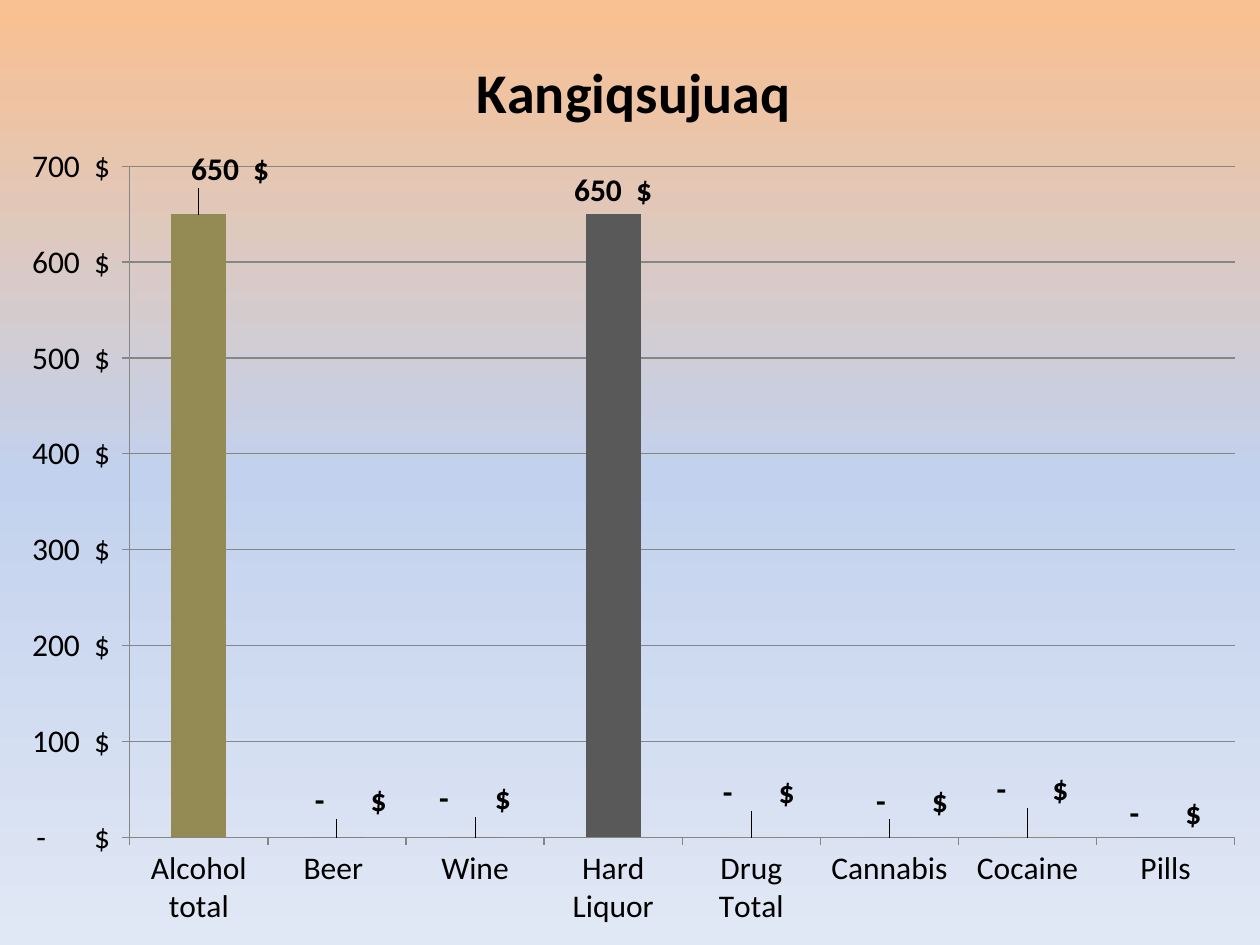
import pptx
import pptx.chart.data
import pptx.dml.color
import pptx.enum.chart
import pptx.oxml
import pptx.oxml.ns
import pptx.util
from lxml import etree

RGBColor = pptx.dml.color.RGBColor
Inches, Pt = pptx.util.Inches, pptx.util.Pt
qn = pptx.oxml.ns.qn

# Content: category, value, bar colour, label shift (share of chart width, height)
TITLE = "Kangiqsujuaq"
BARS = [
    ("Alcohol total", 650, RGBColor(0x94, 0x8A, 0x54), (0.025, -0.022)),
    ("Beer ", 0, RGBColor(0x60, 0x4A, 0x7B), (0.011, -0.014)),
    ("Wine", 0, RGBColor(0x95, 0x37, 0x35), (0, -0.016)),
    ("Hard Liquor", 650, RGBColor(0x59, 0x59, 0x59), None),
    ("Drug Total", 0, RGBColor(0x9B, 0xBB, 0x59), (0.006, -0.022)),
    ("Cannabis", 0, RGBColor(0x80, 0x64, 0xA2), (0.018, -0.013)),
    ("Cocaine", 0, RGBColor(0xF7, 0x96, 0x46), (0.004, -0.025)),
    ("Pills", 0, None, None),
]
BLUE = RGBColor(0x4F, 0x81, 0xBD)
BLACK = RGBColor(0, 0, 0)
GRAY = RGBColor(0x86, 0x86, 0x86)
BACKGROUND = [
    (0, RGBColor(0xFA, 0xC0, 0x90)),
    (50, RGBColor(0xC2, 0xD1, 0xED)),
    (100, RGBColor(0xE1, 0xE8, 0xF5)),
]
MONEY = ('_ * #,##0_)\\ "$"_ ;_ * \\(#,##0\\)\\ "$"_ ;'
         '_ * "-"??_)\\ "$"_ ;_ @_ ')


def set_font(font, size, bold=False):
    font.name = "Calibri"
    font.size = Pt(size)
    font.bold = bold
    font.color.rgb = BLACK


def manual_layout(**values):
    """Build a c:layout element from its parts, given in schema order."""
    layout = pptx.oxml.parse_xml(
        f"<c:layout {pptx.oxml.ns.nsdecls('c')}><c:manualLayout/></c:layout>")
    for name, value in values.items():
        etree.SubElement(layout[0], qn(f"c:{name}")).set("val", str(value))
    return layout


def replace_layout(parent, index, layout):
    for old in parent.findall(qn("c:layout")):
        parent.remove(old)
    parent.insert(index, layout)


prs = pptx.Presentation()
prs.slide_width, prs.slide_height = Inches(10), Inches(7.5)
s = prs.slides.add_slide(prs.slide_layouts[6])

# Background gradient, top to bottom
s.background.fill.gradient()
grad = s.background.fill._xPr.find(qn("a:gradFill"))
for child in list(grad):
    grad.remove(child)
stops = etree.SubElement(grad, qn("a:gsLst"))
for position, color in BACKGROUND:
    stop = etree.SubElement(stops, qn("a:gs"), pos=str(position * 1000))
    etree.SubElement(stop, qn("a:srgbClr"), val=str(color))
etree.SubElement(grad, qn("a:lin"), ang="5400000", scaled="0")

# Chart
data = pptx.chart.data.CategoryChartData()
data.categories = [bar[0] for bar in BARS]
data.add_series(TITLE, [bar[1] for bar in BARS])
chart = s.shapes.add_chart(
    pptx.enum.chart.XL_CHART_TYPE.COLUMN_CLUSTERED, 0, 0,
    prs.slide_width, prs.slide_height, data).chart
set_font(chart.font, 18)
chart.has_legend = False
plot_area = chart._chartSpace.chart.plotArea
replace_layout(plot_area, 0, manual_layout(
    layoutTarget="inner", xMode="edge", yMode="edge",
    x=0.103, y=0.176, w=0.877, h=0.71))

# Title
chart.has_title = True
r = chart.chart_title.text_frame.paragraphs[0].add_run()
r.text = TITLE
set_font(r.font, 32, True)
replace_layout(chart.chart_title._element, 1, manual_layout(
    xMode="edge", yMode="edge", x=0.37, y=0.045))

# Axes
for axis in (chart.category_axis, chart.value_axis):
    axis.format.line.color.rgb = GRAY
    axis.major_tick_mark = pptx.enum.chart.XL_TICK_MARK.OUTSIDE
    set_font(axis.tick_labels.font, 18)
axis = chart.value_axis
axis.minimum_scale, axis.maximum_scale, axis.major_unit = 0, 700, 100
axis.has_major_gridlines = True
axis.major_gridlines.format.line.color.rgb = GRAY
axis.tick_labels.number_format = MONEY
axis.tick_labels.number_format_is_linked = False

# Bars and their labels
plot = chart.plots[0]
plot.gap_width = 150
plot.vary_by_categories = False
series = plot.series[0]
series.format.fill.solid()
series.format.fill.fore_color.rgb = BLUE
series.invert_if_negative = False
outside = pptx.enum.chart.XL_LABEL_POSITION.OUTSIDE_END
labels = series.data_labels
labels.show_value = True
labels.position = outside
labels.number_format = MONEY
labels.number_format_is_linked = False
set_font(labels.font, 18, True)

for i, (name, value, color, shift) in enumerate(BARS):
    point = series.points[i]
    if color is not None:
        point.format.fill.solid()
        point.format.fill.fore_color.rgb = color
    if shift is not None:
        label = point.data_label
        label.position = outside
        set_font(label.font, 18, True)
        dlbl = label._dLbl
        replace_layout(dlbl, 1, manual_layout(x=shift[0], y=shift[1]))
        num_fmt = etree.Element(qn("c:numFmt"), formatCode=MONEY, sourceLinked="0")
        dlbl.insert(2, num_fmt)

prs.save("out.pptx")
